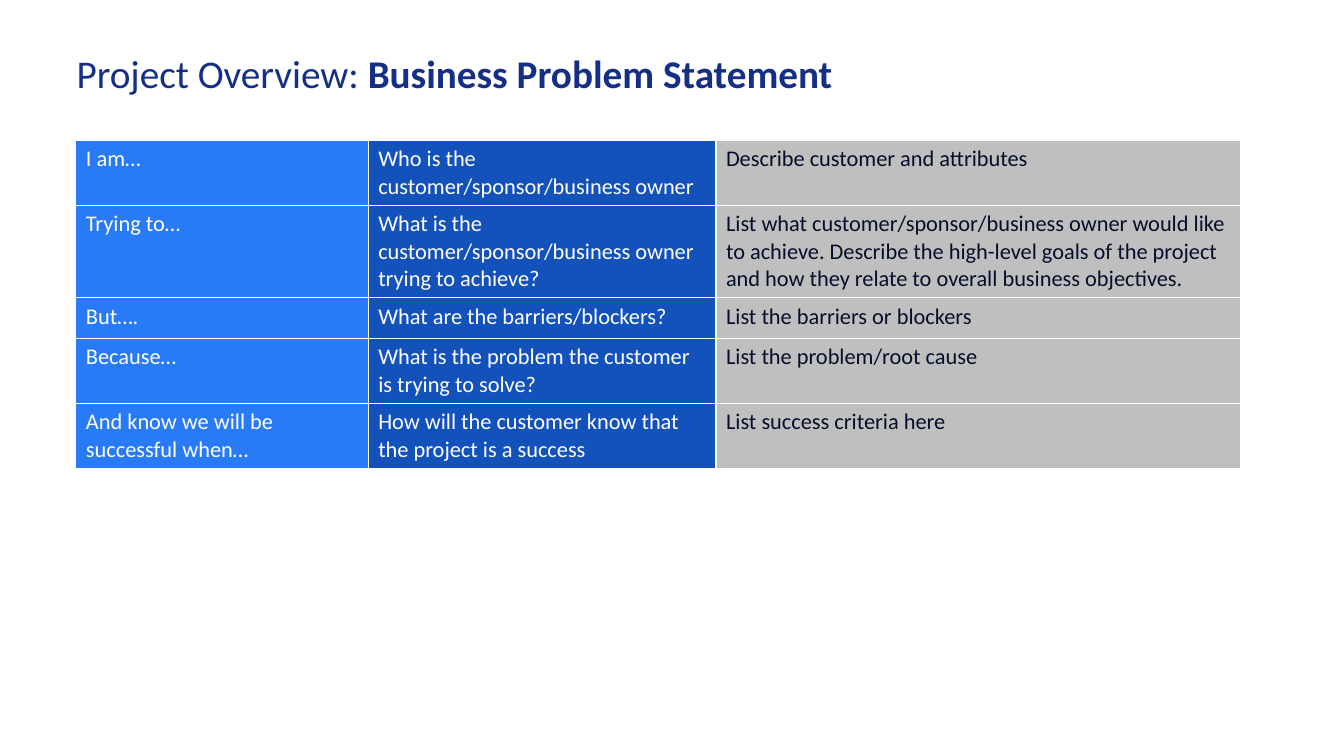
import pptx
import pptx.dml.color
import pptx.enum.text
import pptx.oxml
import pptx.oxml.ns
import pptx.util

Pt = pptx.util.Pt

HEADING = [("Project Overview: ", False), ("Business Problem Statement", True)]
STATEMENT = [
    ("I am…", "Who is the customer/sponsor/business owner", "Describe customer and attributes"),
    ("Trying to…", "What is the customer/sponsor/business owner trying to achieve?",
     "List what customer/sponsor/business owner would like to achieve. Describe the "
     "high-level goals of the project and how they relate to overall business objectives."),
    ("But….", "What are the barriers/blockers?", "List the barriers or blockers"),
    ("Because…", "What is the problem the customer is trying to solve?", "List the problem/root cause"),
    ("And know we will be successful when…",
     "How will the customer know that the project is a success", "List success criteria here"),
]
COLUMNS = [(208.8, "287AF5", "FFFFFF"), (248.4, "1351BB", "FFFFFF"), (374.4, "BFBFBF", "060F2A")]
ROW_HEIGHTS = [46.2, 65.7, 29.2, 46.2, 46.2]
NAVY = "152F86"
WHITE = "FFFFFF"


def rgb(value):
    return pptx.dml.color.RGBColor.from_string(value)


def add_text(paragraph, text, size=16, color=WHITE, bold=False):
    run = paragraph.add_run()
    run.text = text
    run.font.name = "Calibri"
    run.font.size = Pt(size)
    run.font.bold = bold
    run.font.color.rgb = rgb(color)


def add_borders(cell, color=WHITE, width=1):
    properties = cell._tc.get_or_add_tcPr()
    for side in ("lnL", "lnR", "lnT", "lnB"):
        properties.append(pptx.oxml.parse_xml(
            f'<a:{side} {pptx.oxml.ns.nsdecls("a")} w="{Pt(width)}"><a:solidFill>'
            f'<a:srgbClr val="{color}"/></a:solidFill></a:{side}>'))


def main():
    deck = pptx.Presentation()
    deck.slide_width, deck.slide_height = Pt(960), Pt(540)
    slide = deck.slides.add_slide(deck.slide_layouts[5])

    heading = slide.shapes.title
    heading.left, heading.top, heading.width, heading.height = Pt(47.5), Pt(26.6), Pt(838), Pt(55.4)
    heading.text_frame.vertical_anchor = pptx.enum.text.MSO_ANCHOR.MIDDLE
    heading_line = heading.text_frame.paragraphs[0]
    heading_line.alignment = pptx.enum.text.PP_ALIGN.LEFT
    heading_line.line_spacing = 0.9
    for text, bold in HEADING:
        add_text(heading_line, text, size=28, color=NAVY, bold=bold)

    total_width = sum(width for width, _, _ in COLUMNS)
    statement = slide.shapes.add_table(
        len(STATEMENT), len(COLUMNS), Pt(54.2), Pt(100.4), Pt(total_width), Pt(sum(ROW_HEIGHTS))).table
    statement.first_row = False
    statement.horz_banding = False
    for column, (width, _, _) in zip(statement.columns, COLUMNS):
        column.width = Pt(width)
    for row, height, texts in zip(statement.rows, ROW_HEIGHTS, STATEMENT):
        row.height = Pt(height)
        for cell, text, (_, fill, color) in zip(row.cells, texts, COLUMNS):
            add_borders(cell)
            cell.fill.solid()
            cell.fill.fore_color.rgb = rgb(fill)
            add_text(cell.text_frame.paragraphs[0], text, color=color)

    deck.save("out.pptx")


if __name__ == "__main__":
    main()
